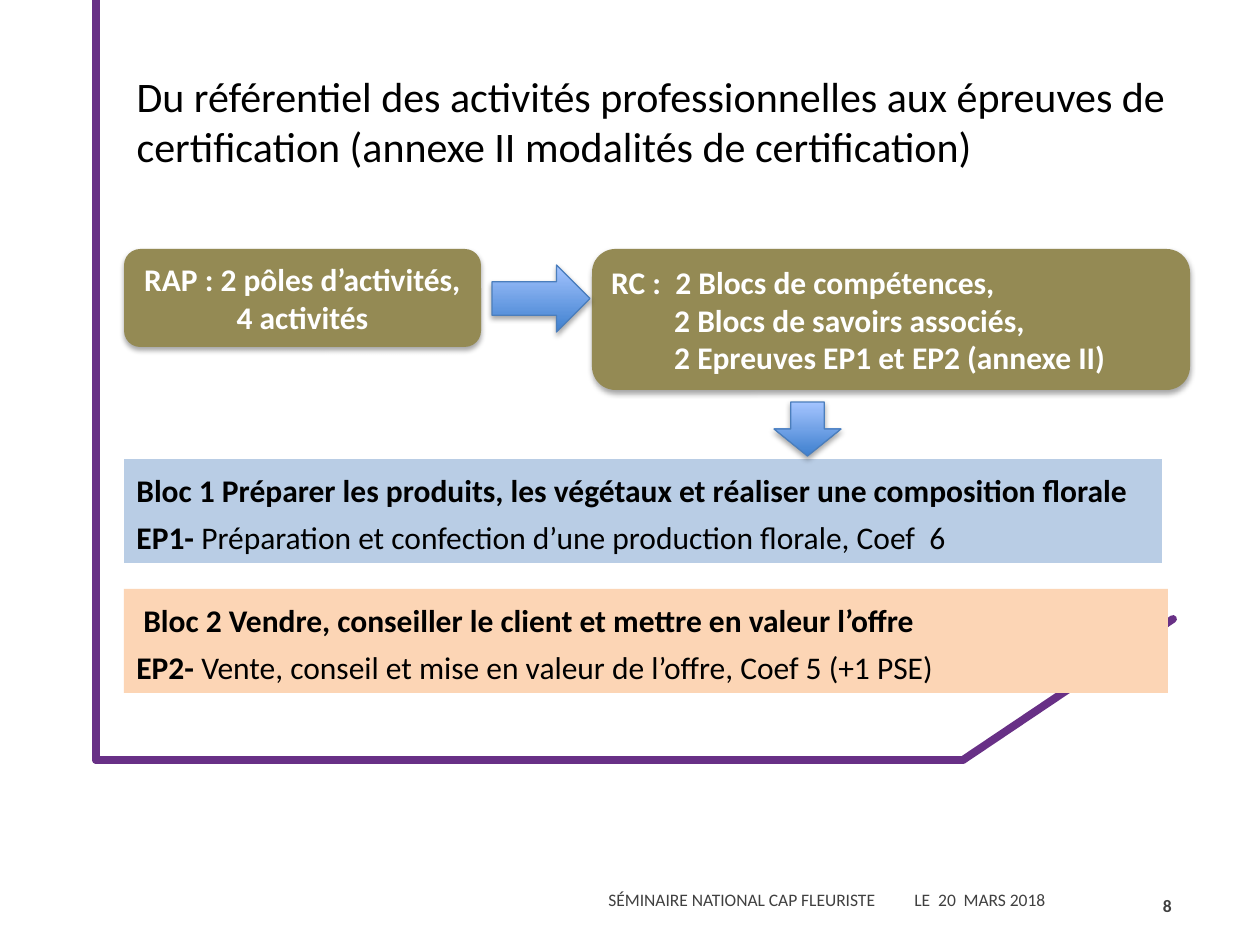
from lxml import etree
from pptx import Presentation
from pptx.dml.color import RGBColor as Rgb
from pptx.enum.shapes import MSO_CONNECTOR as Link, MSO_SHAPE as Shape
from pptx.enum.text import MSO_ANCHOR as Anchor, MSO_AUTO_SIZE as AutoSize, PP_ALIGN as Align
from pptx.oxml import parse_xml
from pptx.oxml.ns import nsdecls, qn
from pptx.util import Emu, Pt

PX = 914400 / 126
COLORS = {
    "frame": "683086", "olive": "948A54", "blue": "B9CDE5", "peach": "FCD5B5",
    "arrow_dark": "3F80CE", "arrow_light": "A4C4FF", "arrow_line": "4B7EBC",
    "white": "FFFFFF", "black": "000000", "grey": "404040",
}


def px(*lengths):
    """Turn pixel lengths into EMU."""
    return [Emu(round(length * PX)) for length in lengths]


def rgb(name):
    """Look up a named colour."""
    return Rgb.from_string(COLORS[name])


def apply(target, values):
    """Set each attribute in values on target."""
    for name, value in values.items():
        setattr(target, name, value)


def write(frame, lines, size, color, indents=(), **layout):
    """Fill a text frame with lines, each a list of (text, bold) runs."""
    apply(frame, {"word_wrap": True, "auto_size": AutoSize.NONE})
    for index, line in enumerate(lines):
        paragraph = frame.paragraphs[0] if index == 0 else frame.add_paragraph()
        if indents:
            paragraph._p.get_or_add_pPr().set("marL", str(px(indents[index])[0]))
        apply(paragraph, layout)
        if index == 0:
            paragraph.space_before = Pt(0)
        for text, bold in line:
            run = paragraph.add_run()
            run.text = text
            apply(run.font, {"name": "Calibri", "size": Pt(size), "bold": bold})
            run.font.color.rgb = rgb(color)


def add_shadow(shape):
    """Give a shape a soft shadow below it."""
    shape.shadow.inherit = False
    shape._element.spPr.find(qn("a:effectLst")).append(parse_xml(
        f'<a:outerShdw {nsdecls("a")} blurRad="40000" dist="23000" dir="5400000" rotWithShape="0">'
        '<a:srgbClr val="000000"><a:alpha val="35000"/></a:srgbClr></a:outerShdw>'))


def add_frame(slide, box):
    """Draw the purple frame with its slanted end."""
    left, top, width, height = box
    bottom = top + height
    corners = [(left, top), (left, bottom), (left + 867, bottom), (left + width, bottom - 141)]
    for start, end in zip(corners, corners[1:]):
        edge = slide.shapes.add_connector(Link.STRAIGHT, *px(*start, *end))
        edge.line.color.rgb = rgb("frame")
        edge.line.width = Pt(4.5)
        edge.line._get_or_add_ln().set("cap", "rnd")
        etree.SubElement(edge._element.spPr, qn("a:effectLst"))


def add_title(slide, box, text):
    """Place the slide title."""
    title = slide.shapes.title
    apply(title, dict(zip(("left", "top", "width", "height"), px(*box))))
    title.text_frame.vertical_anchor = Anchor.TOP
    write(title.text_frame, [[(text, False)]], 24, "black", alignment=Align.LEFT)


def add_panel(slide, kind, box, fill):
    """Add a plain filled panel without outline."""
    panel = slide.shapes.add_shape(kind, *px(*box))
    panel.fill.solid()
    panel.fill.fore_color.rgb = rgb(fill)
    panel.line.fill.background()
    panel.shadow.inherit = False
    return panel


def add_reference(slide, box, lines, align, indents=()):
    """Add a rounded olive box for one reference document."""
    panel = add_panel(slide, Shape.ROUNDED_RECTANGLE, box, "olive")
    add_shadow(panel)
    panel.text_frame.vertical_anchor = Anchor.MIDDLE
    write(panel.text_frame, [[(line, True)] for line in lines], 18, "white", indents, alignment=align)


def add_block(slide, box, fill, heading, exam, content, indent=0):
    """Add a coloured band with a block heading and its exam."""
    band = add_panel(slide, Shape.RECTANGLE, box, fill)
    band.text_frame.vertical_anchor = Anchor.TOP
    write(band.text_frame, [[(heading, True)], [(exam, True), (content, False)]], 18, "black",
          (indent, 0), alignment=Align.LEFT, line_spacing=1.15, space_before=Pt(1), space_after=Pt(1))


def add_arrow(slide, kind, box):
    """Add a block arrow with a blue gradient."""
    arrow = slide.shapes.add_shape(kind, *px(*box))
    arrow.fill.gradient()
    arrow.fill.gradient_angle = 90
    for stop, color in zip(arrow.fill.gradient_stops, ("arrow_dark", "arrow_light")):
        stop.color.rgb = rgb(color)
    for stop, position in zip(arrow.fill.gradient_stops, (0, 1)):
        stop.position = position
    arrow.line.color.rgb = rgb("arrow_line")
    arrow.line.width = Pt(0.75)
    add_shadow(arrow)


def add_footer(slide, box, event, date, number):
    """Add the event, its date and the page number."""
    left, top, width, height = box
    caption = slide.shapes.add_textbox(*px(left, top, 473, height)).text_frame
    caption.vertical_anchor = Anchor.MIDDLE
    properties = caption.paragraphs[0]._p.get_or_add_pPr()
    tabs = etree.SubElement(properties, qn("a:tabLst"))
    etree.SubElement(tabs, qn("a:tab"), pos=str(px(306)[0]), algn="l")
    write(caption, [[(f"{event}\t{date}", False)]], 10, "grey", line_spacing=Pt(13.2))
    page = slide.shapes.add_textbox(*px(left + width - 55, top + 8, 55, height)).text_frame
    page.vertical_anchor = Anchor.MIDDLE
    write(page, [[(number, True)]], 10, "grey", alignment=Align.RIGHT)


def main():
    """Build the slide and save it."""
    deck = Presentation()
    deck.slide_width, deck.slide_height = px(1260, 945)
    slide = deck.slides.add_slide(deck.slide_layouts[5])
    add_frame(slide, (96, 0, 1077, 760))
    add_title(slide, (124, 64, 1099, 115),
              "Du référentiel des activités professionnelles aux épreuves de "
              "certification (annexe II modalités de certification)")
    add_reference(slide, (124, 249, 357, 98),
                  ["RAP : 2 pôles d’activités,", "4 activités"], Align.CENTER)
    add_reference(slide, (592, 249, 598, 141),
                  ["RC :  2 Blocs de compétences,", "2 Blocs de savoirs associés,",
                   "2 Epreuves EP1 et EP2 (annexe II)"], Align.LEFT, (0, 63, 63))
    add_block(slide, (124, 589, 1044, 104), "peach",
              "Bloc 2 Vendre, conseiller le client et mettre en valeur l’offre",
              "EP2- ", "Vente, conseil et mise en valeur de l’offre, Coef 5 (+1 PSE)", 7)
    add_block(slide, (124, 459, 1038, 104), "blue",
              "Bloc 1 Préparer les produits, les végétaux et réaliser une composition florale",
              "EP1- ", "Préparation et confection d’une production florale, Coef  6")
    add_arrow(slide, Shape.RIGHT_ARROW, (492, 265, 98, 67))
    add_arrow(slide, Shape.DOWN_ARROW, (774, 402, 67, 54))
    add_footer(slide, (596, 873, 588, 50),
               "SÉMINAIRE NATIONAL CAP FLEURISTE", "LE  20  MARS 2018", "8")
    deck.save("out.pptx")


if __name__ == "__main__":
    main()
